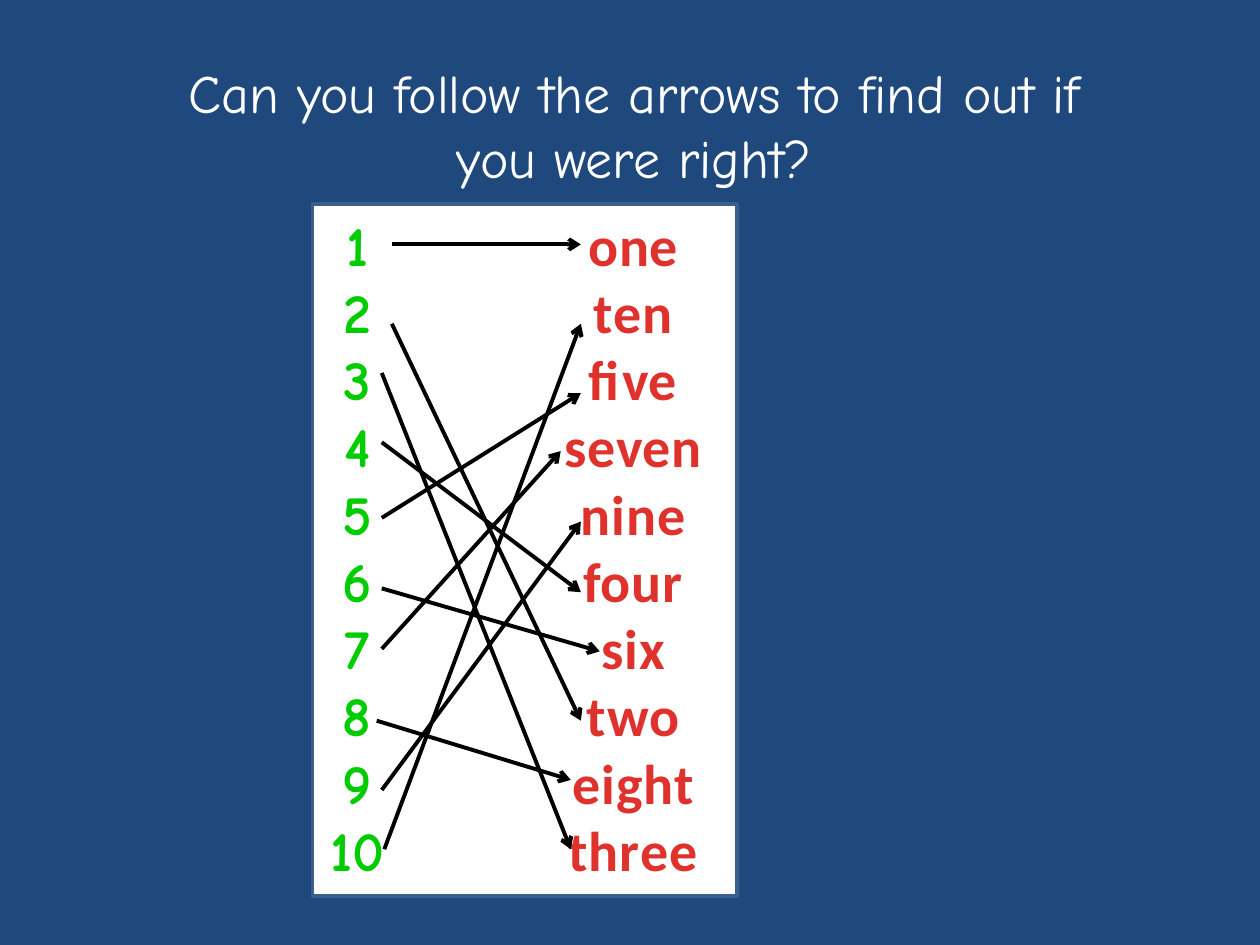
import pptx
import pptx.dml.color
import pptx.enum.shapes
import pptx.enum.text
import pptx.oxml
import pptx.oxml.ns
import pptx.util
from pptx.util import Inches

NUMBERS = [str(number) for number in range(1, 11)]
WORDS = ["one", "ten", "five", "seven", "nine", "four", "six", "two", "eight", "three"]
ARROWS = [
    (3.11, 1.94, 4.61, 1.94),
    (3.11, 2.57, 4.61, 5.72),
    (3.03, 2.96, 4.53, 6.74),
    (3.03, 3.51, 4.61, 4.7),
    (3.03, 4.11, 4.61, 3.12),
    (3.03, 4.67, 4.76, 5.17),
    (3.03, 5.15, 4.45, 3.58),
    (2.99, 5.72, 4.53, 6.19),
    (3.03, 6.27, 4.61, 4.14),
    (3.05, 6.74, 4.61, 2.57),
]


def color(value):
    return pptx.dml.color.RGBColor.from_string(value)


def write(para, text, font, size, fill, bold=False, spacing=0):
    para.alignment = pptx.enum.text.PP_ALIGN.CENTER
    span = para.add_run()
    span.text = text
    span.font.name = font
    span.font.size = pptx.util.Pt(size)
    span.font.bold = bold
    span.font.color.rgb = color(fill)
    if spacing:
        span.font._element.set("spc", str(int(spacing * 100)))


class MatchingPage:
    heading_font = "Comic Neue"
    word_font = "Calibri"
    arrow_color = "000000"

    def __init__(self, deck, background):
        self.page = deck.slides.add_slide(deck.slide_layouts[5])
        fill = self.page.background.fill
        fill.solid()
        fill.fore_color.rgb = color(background)

    def title(self, text, left, top, width, height):
        box = self.page.shapes.title
        box.left, box.top = Inches(left), Inches(top)
        box.width, box.height = Inches(width), Inches(height)
        frame = box.text_frame
        frame.word_wrap = True
        frame.auto_size = pptx.enum.text.MSO_AUTO_SIZE.NONE
        frame.vertical_anchor = pptx.enum.text.MSO_ANCHOR.MIDDLE
        write(frame.paragraphs[0], text, self.heading_font, 30.8, "FFFFFF")

    def panel(self, left, top, width, height):
        box = self.page.shapes.add_shape(
            pptx.enum.shapes.MSO_SHAPE.RECTANGLE,
            Inches(left), Inches(top), Inches(width), Inches(height))
        box.shadow.inherit = False
        box.fill.solid()
        box.fill.fore_color.rgb = color("FFFFFF")
        box.line.color.rgb = color("3A5F8C")
        box.line.width = pptx.util.Pt(2)

    def column(self, entries, left, top, width, height, **style):
        box = self.page.shapes.add_textbox(
            Inches(left), Inches(top), Inches(width), Inches(height))
        frame = box.text_frame
        frame.word_wrap = True
        for index, entry in enumerate(entries):
            para = frame.add_paragraph() if index else frame.paragraphs[0]
            write(para, entry, size=32, bold=True, **style)

    def arrow(self, *ends):
        connector = self.page.shapes.add_connector(
            pptx.enum.shapes.MSO_CONNECTOR.STRAIGHT, *map(Inches, ends))
        connector.line.color.rgb = color(self.arrow_color)
        connector.line.width = pptx.util.Pt(2.25)
        head = pptx.oxml.parse_xml(
            f'<a:tailEnd {pptx.oxml.ns.nsdecls("a")} type="arrow"/>')
        connector.line._get_or_add_ln().append(head)
        effects = pptx.oxml.parse_xml(f'<a:effectLst {pptx.oxml.ns.nsdecls("a")}/>')
        connector._element.spPr.append(effects)


def main():
    deck = pptx.Presentation()
    deck.slide_width, deck.slide_height = Inches(10), Inches(7.5)
    page = MatchingPage(deck, "1F497D")
    page.panel(2.48, 1.62, 3.37, 5.49)
    page.column(NUMBERS, 2.25, 1.62, 1.17, 5.49,
                font=page.heading_font, fill="00CC00")
    page.column(WORDS, 4.2, 1.62, 1.65, 5.49,
                font=page.word_font, fill="E0322D", spacing=0.5)
    page.title("Can you follow the arrows to find out if you were right?",
               1.06, 0.52, 7.95, 0.94)
    for ends in ARROWS:
        page.arrow(*ends)
    deck.save("out.pptx")


if __name__ == "__main__":
    main()
